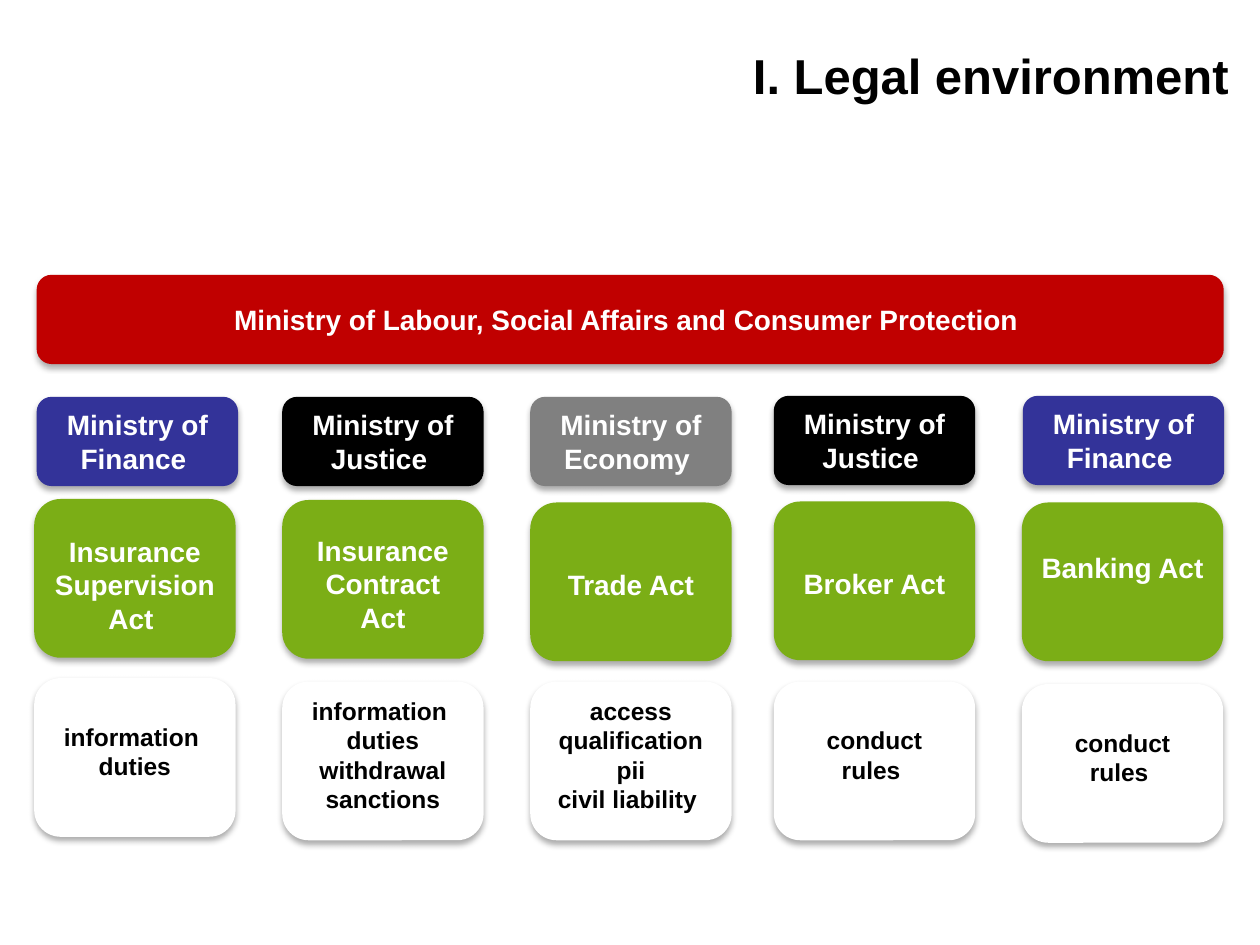
from dataclasses import dataclass

from lxml.etree import SubElement
from pptx import Presentation
from pptx.dml.color import RGBColor
from pptx.enum.shapes import MSO_SHAPE
from pptx.enum.text import MSO_ANCHOR, PP_ALIGN
from pptx.oxml.ns import qn
from pptx.shapes.autoshape import Shape
from pptx.slide import Slide
from pptx.text.text import TextFrame
from pptx.util import Cm, Pt


@dataclass(frozen=True)
class Theme:
    font: str = "Arial"
    title: int = 28
    heading: int = 16
    body: int = 14
    line_factor: float = 1.2
    black: str = "000000"
    white: str = "FFFFFF"
    red: str = "C00000"
    blue: str = "333399"
    grey: str = "808080"
    green: str = "7BAE16"


@dataclass(frozen=True)
class Card:
    text: str
    left: float
    top: float
    fill: str
    lead: int = 0  # points of space above the text


@dataclass(frozen=True)
class Row:
    height: float
    size: int
    color: str
    cards: tuple[Card, ...]
    width: float = 4.06


T = Theme()
COLUMNS = (0.69, 5.69, 10.69, 15.6, 20.6)

BANNER = Row(1.8, T.heading, T.white, (
    Card("Ministry of Labour, Social Affairs and Consumer Protection ", 0.74, 5.54, T.red, 8),
), width=23.93)

MINISTRIES = Row(1.8, T.heading, T.white, (
    Card("Ministry of Finance ", 0.74, 8, T.blue),
    Card("Ministry of Justice ", COLUMNS[1], 8, T.black),
    Card("Ministry of Economy ", COLUMNS[2], 8, T.grey),
    Card("Ministry of Justice ", COLUMNS[3], 7.98, T.black),
    Card("Ministry of Finance ", 20.62, 7.98, T.blue),
))

ACTS = Row(3.2, T.heading, T.white, (
    Card("Insurance Supervision Act ", COLUMNS[0], 10.06, T.green, 10),
    Card("Insurance Contract Act", COLUMNS[1], 10.08, T.green, 9),
    Card("Trade Act", COLUMNS[2], 10.13, T.green, 24),
    Card("Broker Act", COLUMNS[3], 10.11, T.green, 24),
    Card("Banking Act", COLUMNS[4], 10.13, T.green, 16),
))

DUTIES = Row(3.2, T.body, T.black, (
    Card("information \vduties", COLUMNS[0], 13.67, T.white, 14),
    Card("information \vduties\vwithdrawal sanctions", COLUMNS[1], 13.74, T.white),
    Card("access\vqualification\vpii\vcivil liability ", COLUMNS[2], 13.74, T.white),
    Card("conduct\vrules ", COLUMNS[3], 13.74, T.white, 14),
    Card("conduct\vrules ", COLUMNS[4], 13.79, T.white, 14),
))


def write(tf: TextFrame, text: str, *, size: int, color: str, align: PP_ALIGN,
          side: float = 0, top: int = 0) -> None:
    """Fill a text frame with one bold paragraph."""
    tf.word_wrap = True
    tf.vertical_anchor = MSO_ANCHOR.TOP
    tf.margin_left = tf.margin_right = Cm(side)
    tf.margin_top, tf.margin_bottom = top, 0
    p = tf.paragraphs[0]
    p.text = text
    p.alignment = align
    p.line_spacing = Pt(round(size * T.line_factor, 1))
    for r in p.runs:
        r.font.name, r.font.size, r.font.bold = T.font, Pt(size), True
        r.font.color.rgb = RGBColor.from_string(color)


def add_shadow(sp: Shape) -> None:
    """Give a shape a soft shadow straight below it."""
    sp.shadow.inherit = False
    effects = sp._element.spPr.find(qn("a:effectLst"))
    shadow = SubElement(effects, qn("a:outerShdw"), blurRad=str(Pt(3.5)),
                        dist=str(Pt(2.2)), dir="5400000", rotWithShape="0")
    color = SubElement(shadow, qn("a:srgbClr"), val=T.black)
    SubElement(color, qn("a:alpha"), val="32000")


def draw_row(s: Slide, row: Row) -> None:
    for card in row.cards:
        sp = s.shapes.add_shape(MSO_SHAPE.ROUNDED_RECTANGLE, Cm(card.left), Cm(card.top),
                                Cm(row.width), Cm(row.height))
        sp.fill.solid()
        sp.fill.fore_color.rgb = RGBColor.from_string(card.fill)
        sp.line.fill.background()
        add_shadow(sp)
        write(sp.text_frame, card.text, size=row.size, color=row.color,
              align=PP_ALIGN.CENTER, side=0.24,
              top=Cm(0.13) + Pt(card.lead * T.line_factor))


def main() -> None:
    prs = Presentation()
    prs.slide_width, prs.slide_height = Cm(25.4), Cm(19.05)
    s = prs.slides.add_slide(prs.slide_layouts[6])

    # Cards
    for row in (ACTS, MINISTRIES, DUTIES, BANNER):
        draw_row(s, row)

    # Title
    title = s.shapes.add_textbox(Cm(3.1), Cm(0.91), Cm(21.67), Cm(1.19))
    write(title.text_frame, "I. Legal environment", size=T.title, color=T.black,
          align=PP_ALIGN.RIGHT)

    prs.save("out.pptx")


if __name__ == "__main__":
    main()
